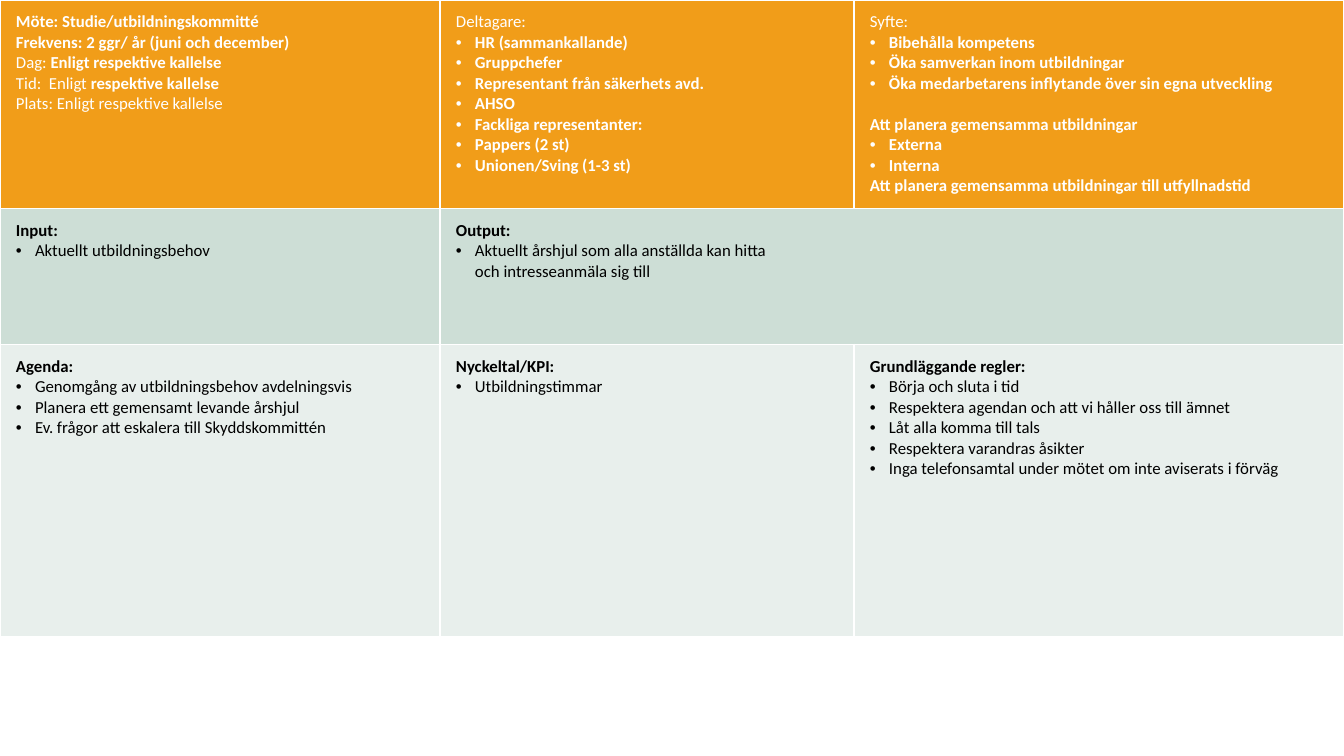
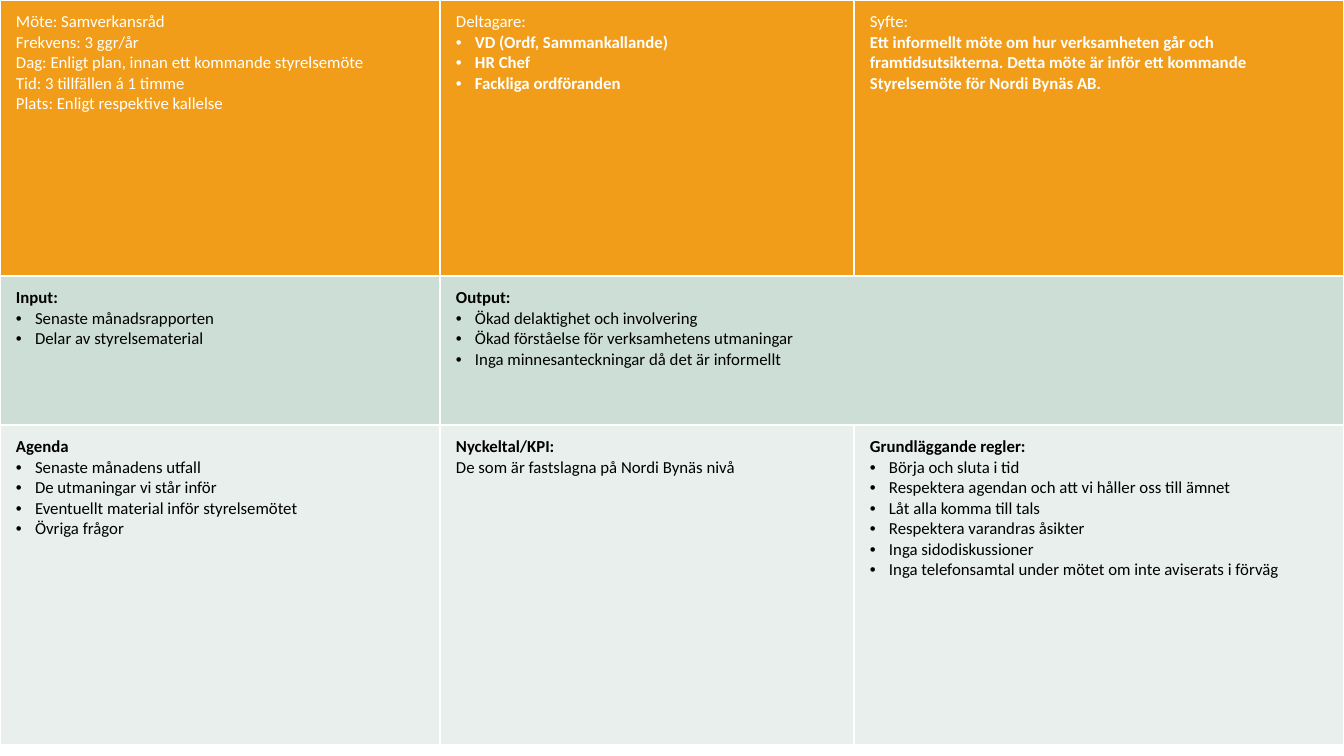
from dataclasses import dataclass

from lxml import etree
from pptx import Presentation
from pptx import util as u
from pptx.dml.color import RGBColor
from pptx.enum import text
from pptx.oxml import ns

# Scale: the page is 1344 px wide
PAGE_WIDTH, PAGE_HEIGHT = 1344, 756
SCALE = 12192000 / PAGE_WIDTH

# Shared look
WHITE = RGBColor(0xFF, 0xFF, 0xFF)
BLACK = RGBColor(0x00, 0x00, 0x00)
ORANGE = RGBColor(0xF1, 0x9D, 0x19)
SAGE = RGBColor(0xCD, 0xDE, 0xD6)
PALE = RGBColor(0xE8, 0xEF, 0xEC)
FONT = "Calibri"
FONT_SIZE = 12
LINE_GAP = 14.6  # points, one line of text
COLUMNS = (440, 414, 490)
BANDS = ((ORANGE, WHITE), (SAGE, BLACK), (PALE, BLACK))  # fill, text
BORDER_POINTS = 1
MARGIN_LEFT, MARGIN = 16, 12
BULLET_INDENT = 19


@dataclass(frozen=True)
class Span:
    text: str
    bold: bool = False


@dataclass(frozen=True)
class Line:
    spans: tuple[Span, ...]
    bullet: bool = False
    gap: float = 0


@dataclass(frozen=True)
class Meeting:
    heights: tuple[int, int, int]
    rows: tuple[tuple[list[Line], ...], ...]


def px(length: int) -> u.Emu:
    return u.Emu(round(length * SCALE))


def line(words: str, bold: bool = False, bullet: bool = False, gap: float = 0) -> Line:
    return Line((Span(words, bold),), bullet, gap)


def lines(*texts: str, bold: bool = False, bullet: bool = False) -> list[Line]:
    return [line(words, bold, bullet) for words in texts]


def section(heading: str, *items: str, heading_bold: bool = True,
            bold: bool = False) -> list[Line]:
    """A heading followed by a bulleted list."""
    return [line(heading, heading_bold), *lines(*items, bold=bold, bullet=True)]


# Contents
def rules(*extra: str) -> list[Line]:
    return section(
        "Grundläggande regler:",
        "Börja och sluta i tid",
        "Respektera agendan och att vi håller oss till ämnet",
        "Låt alla komma till tals",
        "Respektera varandras åsikter",
        *extra,
        "Inga telefonsamtal under mötet om inte aviserats i förväg",
    )


TRAINING_COMMITTEE = Meeting(
    heights=(208, 136, 292),
    rows=(
        (
            [
                *lines("Möte: Studie/utbildningskommitté",
                       "Frekvens: 2 ggr/ år (juni och december)", bold=True),
                Line((Span("Dag: "), Span("Enligt respektive kallelse", True))),
                Line((Span("Tid:  Enligt "), Span("respektive kallelse", True))),
                line("Plats: Enligt respektive kallelse"),
            ],
            section("Deltagare:", "HR (sammankallande)", "Gruppchefer",
                    "Representant från säkerhets avd.", "AHSO",
                    "Fackliga representanter:", "Pappers (2 st)",
                    "Unionen/Sving (1-3 st)", heading_bold=False, bold=True),
            [
                *section("Syfte:", "Bibehålla kompetens",
                         "Öka samverkan inom utbildningar",
                         "Öka medarbetarens inflytande över sin egna utveckling",
                         heading_bold=False, bold=True),
                line("Att planera gemensamma utbildningar", bold=True, gap=LINE_GAP),
                *lines("Externa", "Interna", bold=True, bullet=True),
                line("Att planera gemensamma utbildningar till utfyllnadstid", bold=True),
            ],
        ),
        (
            section("Input:", "Aktuellt utbildningsbehov"),
            section("Output:", "Aktuellt årshjul som alla anställda kan hitta \n"
                               "och intresseanmäla sig till"),
        ),
        (
            section("Agenda:", "Genomgång av utbildningsbehov avdelningsvis",
                    "Planera ett gemensamt levande årshjul",
                    "Ev. frågor att eskalera till Skyddskommittén"),
            section("Nyckeltal/KPI:", "Utbildningstimmar"),
            rules(),
        ),
    ),
)

COOPERATION_COUNCIL = Meeting(
    heights=(276, 149, 320),
    rows=(
        (
            lines("Möte: Samverkansråd", "Frekvens: 3 ggr/år",
                  "Dag: Enligt plan, innan ett kommande styrelsemöte",
                  "Tid: 3 tillfällen á 1 timme", "Plats: Enligt respektive kallelse"),
            section("Deltagare:", "VD (Ordf, Sammankallande)", "HR Chef",
                    "Fackliga ordföranden", heading_bold=False, bold=True),
            [
                line("Syfte:"),
                line("Ett informellt möte om hur verksamheten går och "
                     "framtidsutsikterna. Detta möte är inför ett kommande "
                     "Styrelsemöte för Nordi Bynäs AB.", bold=True),
            ],
        ),
        (
            section("Input:", "Senaste månadsrapporten", "Delar av styrelsematerial"),
            section("Output:", "Ökad delaktighet och involvering",
                    "Ökad förståelse för verksamhetens utmaningar",
                    "Inga minnesanteckningar då det är informellt"),
        ),
        (
            section("Agenda", "Senaste månadens utfall", "De utmaningar vi står inför",
                    "Eventuellt material inför styrelsemötet", "Övriga frågor"),
            [line("Nyckeltal/KPI:", bold=True),
             line("De som är fastslagna på Nordi Bynäs nivå")],
            rules("Inga sidodiskussioner"),
        ),
    ),
)


# Drawing
def add_text(para, words: str, *, color: RGBColor, bold: bool = False,
             size: float = FONT_SIZE, font: str = FONT) -> None:
    for index, part in enumerate(words.split("\n")):
        if index:
            para.add_line_break()
        span = para.add_run()
        span.text = part
        span.font.name = font
        span.font.size = u.Pt(size)
        span.font.bold = bold
        span.font.color.rgb = color


def add_bullet(para) -> None:
    properties = para._p.get_or_add_pPr()
    properties.set("marL", str(px(BULLET_INDENT)))
    properties.set("indent", str(-px(BULLET_INDENT)))
    etree.SubElement(properties, ns.qn("a:buFont")).set("typeface", "Arial")
    etree.SubElement(properties, ns.qn("a:buChar")).set("char", "•")


def style_cell(cell, fill: RGBColor) -> None:
    cell.margin_left = px(MARGIN_LEFT)
    cell.margin_top = cell.margin_right = cell.margin_bottom = px(MARGIN)
    cell.vertical_anchor = text.MSO_ANCHOR.TOP
    properties = cell._tc.get_or_add_tcPr()
    for side in ("lnL", "lnR", "lnT", "lnB"):
        border = etree.SubElement(properties, ns.qn(f"a:{side}"))
        border.set("w", str(u.Pt(BORDER_POINTS)))
        solid = etree.SubElement(border, ns.qn("a:solidFill"))
        etree.SubElement(solid, ns.qn("a:srgbClr")).set("val", str(WHITE))
    cell.fill.solid()
    cell.fill.fore_color.rgb = fill


def fill_cell(cell, content: list[Line], color: RGBColor) -> None:
    frame = cell.text_frame
    for index, item in enumerate(content):
        para = frame.add_paragraph() if index else frame.paragraphs[0]
        if item.gap:
            para.space_before = u.Pt(item.gap)
        if item.bullet:
            add_bullet(para)
        for span in item.spans:
            add_text(para, span.text, color=color, bold=span.bold)


def add_meeting(deck, meeting: Meeting) -> None:
    page = deck.slides.add_slide(deck.slide_layouts[6])
    table = page.shapes.add_table(
        len(BANDS), len(COLUMNS), 0, 0, px(sum(COLUMNS)), px(sum(meeting.heights))
    ).table
    table.first_row = table.horz_banding = False
    for column, width in zip(table.columns, COLUMNS):
        column.width = px(width)
    for row, height, (fill, color), contents in zip(
            table.rows, meeting.heights, BANDS, meeting.rows):
        row.height = px(height)
        for cell in row.cells:
            style_cell(cell, fill)
        for cell, content in zip(row.cells, contents):
            fill_cell(cell, content, color)
    # The output cell spans the last two columns
    table.cell(1, 1).merge(table.cell(1, 2))


def main() -> None:
    deck = Presentation()
    deck.slide_width, deck.slide_height = px(PAGE_WIDTH), px(PAGE_HEIGHT)
    for meeting in (TRAINING_COMMITTEE, COOPERATION_COUNCIL):
        add_meeting(deck, meeting)
    deck.save("out.pptx")


if __name__ == "__main__":
    main()
